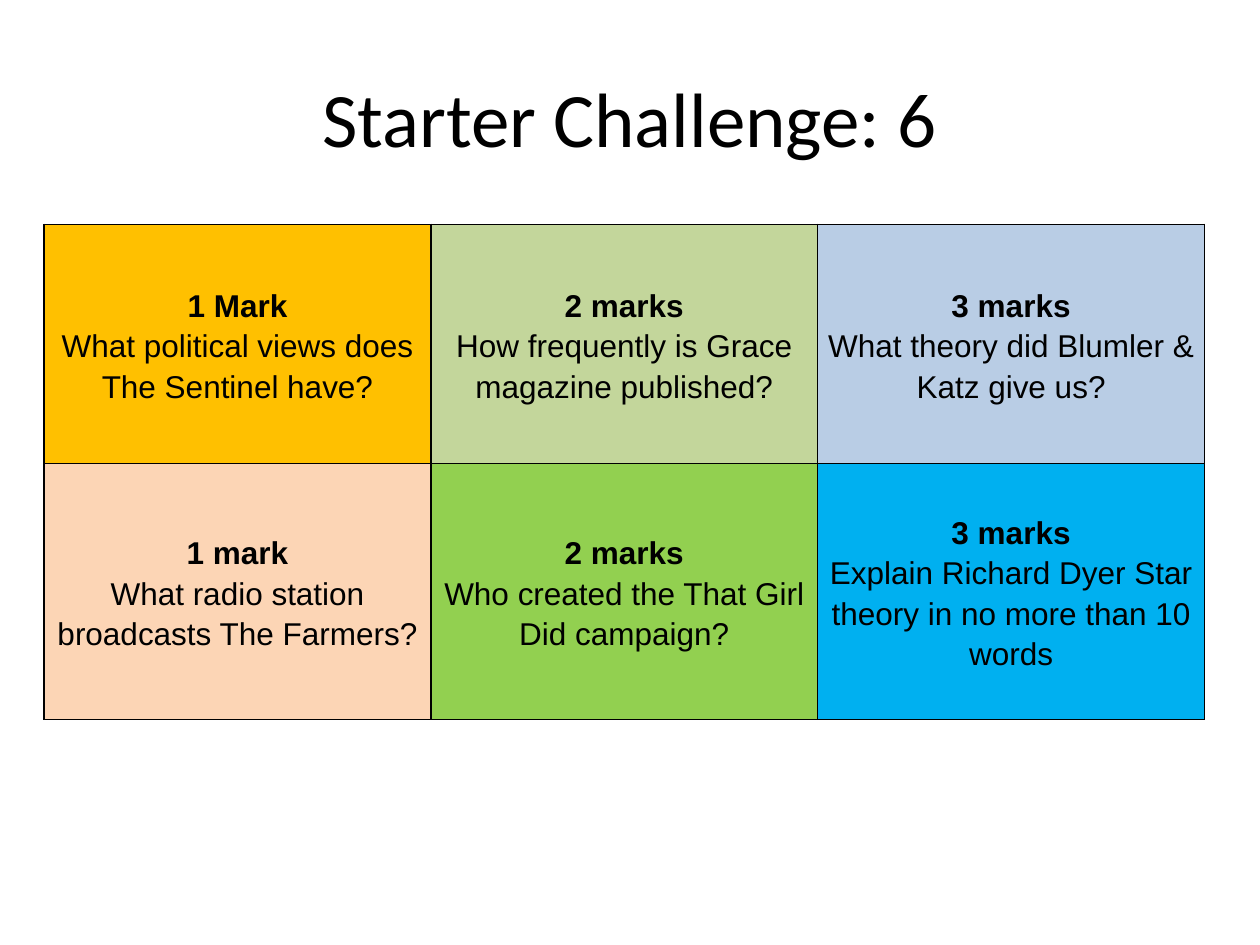
from lxml.etree import fromstring
from pptx import Presentation
from pptx.dml.color import RGBColor
from pptx.enum.text import MSO_ANCHOR as Anchor, PP_ALIGN as Align
from pptx.util import Inches, Pt

DRAWING_NS = "http://schemas.openxmlformats.org/drawingml/2006/main"
BLACK = "000000"
ROW_HEIGHTS = (1.9, 2.03)
# Each question: marks, wording, cell colour
QUESTIONS = (
    (("1 Mark", "What political views does The Sentinel have?", "FFC000"),
     ("2 marks", "How frequently is Grace magazine published?", "C3D69B"),
     ("3 marks", "What theory did Blumler & Katz give us?", "B9CDE5")),
    (("1 mark", "What radio station broadcasts The Farmers?", "FCD5B5"),
     ("2 marks", "Who created the That Girl Did campaign?", "92D050"),
     ("3 marks", "Explain Richard Dyer Star theory in no more than 10 words", "00B0F0")),
)


def colour(value):
    return RGBColor.from_string(value)


def style_font(font, name, size, bold=False):
    font.name, font.size, font.bold = name, Pt(size), bold
    font.color.rgb = colour(BLACK)


def add_borders(cell, width=1):
    properties = cell._tc.get_or_add_tcPr()
    for index, side in enumerate(("lnL", "lnR", "lnT", "lnB")):
        properties.insert(index, fromstring(
            f'<a:{side} xmlns:a="{DRAWING_NS}" w="{Pt(width)}"><a:solidFill>'
            f'<a:srgbClr val="{BLACK}"/></a:solidFill></a:{side}>'))


def place_title(page, text, left, top, width, height):
    title = page.shapes.title
    title.left, title.top = Inches(left), Inches(top)
    title.width, title.height = Inches(width), Inches(height)
    title.text_frame.text = text
    title.text_frame.vertical_anchor = Anchor.MIDDLE
    para = title.text_frame.paragraphs[0]
    para.alignment = Align.CENTER
    style_font(para.font, "Calibri", 44)


def fill_cell(cell, marks, question, fill):
    cell.vertical_anchor = Anchor.MIDDLE
    cell.margin_left = cell.margin_right = Inches(0.07)
    cell.margin_top = cell.margin_bottom = 0
    cell.fill.solid()
    cell.fill.fore_color.rgb = colour(fill)
    add_borders(cell)
    cell.text = f"{marks}\n{question}"
    for para, bold in zip(cell.text_frame.paragraphs, (True, False)):
        para.alignment, para.line_spacing = Align.CENTER, 1.15
        style_font(para.font, "Arial", 18, bold)


def place_questions(page, left, top, width):
    columns = len(QUESTIONS[0])
    table = page.shapes.add_table(
        len(QUESTIONS), columns, Inches(left), Inches(top),
        Inches(width), Inches(sum(ROW_HEIGHTS))).table
    for column in table.columns:
        column.width = Inches(width / columns)
    for row, height, questions in zip(table.rows, ROW_HEIGHTS, QUESTIONS):
        row.height = Inches(height)
        for cell, question in zip(row.cells, questions):
            fill_cell(cell, *question)


def main():
    deck = Presentation()
    deck.slide_width, deck.slide_height = Inches(10), Inches(7.5)
    page = deck.slides.add_slide(deck.slide_layouts[5])  # title only
    place_title(page, "Starter Challenge: 6", 0.5, 0.3, 9, 1.25)
    place_questions(page, 0.35, 1.78, 9.21)
    deck.save("out.pptx")


if __name__ == "__main__":
    main()
